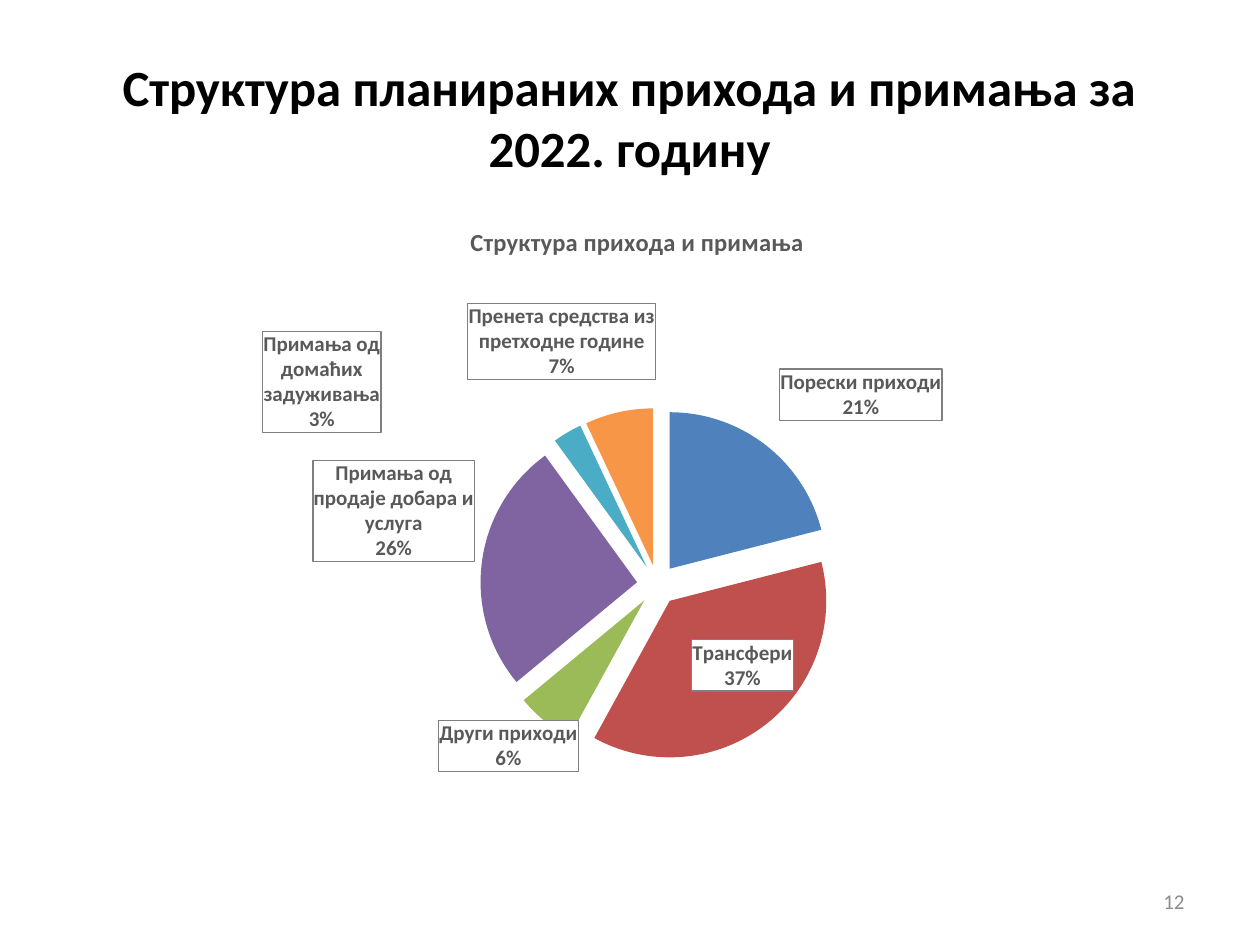
from copy import deepcopy

from pptx import Presentation
from pptx import util as u
from pptx.chart import data as chart_data
from pptx.dml import color
from pptx.enum import chart as charts, text
from pptx.oxml import ns, parse_xml

SHARES = {
    "Порески приходи": 21,
    "Трансфери": 37,
    "Други приходи": 6,
    "Примања од продаје добара и услуга": 26,
    "Примања од домаћих задуживања": 3,
    "Пренета средства из претходне године": 7,
}
SLICE_COLOURS = ["4F81BD", "C0504D", "9BBB59", "8064A2", "4BACC6", "F79646"]
LABEL_SHIFTS = {0: (0.01, -0.03), 2: (0.04, -0.01), 4: (-0.19, 0.01), 5: (0.04, -0.04)}


def rgb(value):
    return color.RGBColor.from_string(value)


def chart_xml(tag, inner="", attributes=""):
    return parse_xml(f"<c:{tag} {ns.nsdecls('c', 'a')} {attributes}>{inner}</c:{tag}>")


def layout_xml(**values):
    inner = "".join(f'<c:{key} val="{value}"/>' for key, value in values.items())
    return chart_xml("layout", f"<c:manualLayout>{inner}</c:manualLayout>")


class SlideBuilder:
    """Holds the type style and the current slide, and adds elements to it."""

    font_name = "Calibri"

    def __init__(self, page):
        self.page = page

    def style_font(self, font, size, colour, bold=False):
        values = {"name": self.font_name, "size": u.Pt(size), "bold": bold}
        for key, value in values.items():
            setattr(font, key, value)
        font.color.rgb = rgb(colour)

    def add_text(self, words, place, align, **style):
        box = self.page.shapes.add_textbox(*map(u.Cm, place))
        frame = box.text_frame
        frame.word_wrap = True
        frame.vertical_anchor = text.MSO_ANCHOR.MIDDLE
        para = frame.paragraphs[0]
        para.alignment = align
        span = para.add_run()
        span.text = words
        self.style_font(span.font, **style)

    def add_pie(self, title, shares, colours, place):
        source = chart_data.CategoryChartData()
        source.categories = list(shares)
        source.add_series(title, list(shares.values()))
        chart = self.page.shapes.add_chart(
            charts.XL_CHART_TYPE.PIE, *map(u.Cm, place), source).chart
        chart.has_legend = False
        self.style_font(chart.font, 10, "000000")
        self.add_chart_title(chart, title)
        plot = chart.plots[0]
        plot.vary_by_categories = True
        series = plot.series[0]
        for index, colour in enumerate(colours):
            fill = series.points[index].format.fill
            fill.solid()
            fill.fore_color.rgb = rgb(colour)
        first_point = series._element.xpath("c:dPt")[0]
        first_point.addprevious(chart_xml("explosion", attributes='val="13"'))
        area = chart._chartSpace.xpath("c:chart/c:plotArea")[0]
        for layout in area.xpath("c:layout"):
            area.remove(layout)
        area.insert(0, layout_xml(layoutTarget="inner", xMode="edge", yMode="edge",
                                  x=0.215, y=0.334, w=0.628, h=0.556))
        return series

    def add_chart_title(self, chart, words):
        chart.has_title = True
        span = chart.chart_title.text_frame.paragraphs[0].add_run()
        span.text = words
        self.style_font(span.font, 14, "595959", True)
        title = chart._chartSpace.xpath("c:chart/c:title")[0]
        for layout in title.xpath("c:layout"):
            title.remove(layout)
        title.xpath("c:tx")[0].addnext(
            layout_xml(xMode="edge", yMode="edge", x=0.33, y=0.04))

    def add_labels(self, series, shifts):
        labels = series.data_labels
        values = {"show_value": False, "show_category_name": True,
                  "show_percentage": True,
                  "position": charts.XL_LABEL_POSITION.BEST_FIT}
        for key, value in values.items():
            setattr(labels, key, value)
        self.style_font(labels.font, 12, "595959", True)
        root = labels._element
        root.xpath("c:txPr")[0].addprevious(chart_xml(
            "spPr", '<a:solidFill><a:srgbClr val="FFFFFF"/></a:solidFill>'
            '<a:ln w="9525"><a:solidFill><a:srgbClr val="7F7F7F"/></a:solidFill></a:ln>'))
        for leader in root.xpath("c:showLeaderLines"):
            root.remove(leader)
        shared = [deepcopy(child) for child in root]
        separator = chart_xml("separator", "\n")
        root.append(deepcopy(separator))
        root.append(chart_xml("showLeaderLines", attributes='val="0"'))
        for place, (index, (x, y)) in enumerate(shifts.items()):
            label = chart_xml("dLbl", f'<c:idx val="{index}"/>')
            label.append(layout_xml(x=x, y=y))
            label.extend(deepcopy(shared + [separator]))
            root.insert(place, label)


def main():
    deck = Presentation()
    deck.slide_width, deck.slide_height = u.Cm(25.4), u.Cm(19.05)
    builder = SlideBuilder(deck.slides.add_slide(deck.slide_layouts[6]))
    builder.add_text("Структура планираних прихода и примања за 2022. годину",
                     (1.27, 0.76, 22.86, 3.18), text.PP_ALIGN.CENTER,
                     size=29, colour="000000", bold=True)
    series = builder.add_pie("Структура прихода и примања", SHARES, SLICE_COLOURS,
                             (3, 3.94, 19.38, 12.83))
    builder.add_labels(series, LABEL_SHIFTS)
    builder.add_text("12", (18.2, 17.66, 5.93, 1.01), text.PP_ALIGN.RIGHT,
                     size=12, colour="8C8C8C")
    deck.save("out.pptx")


if __name__ == "__main__":
    main()
